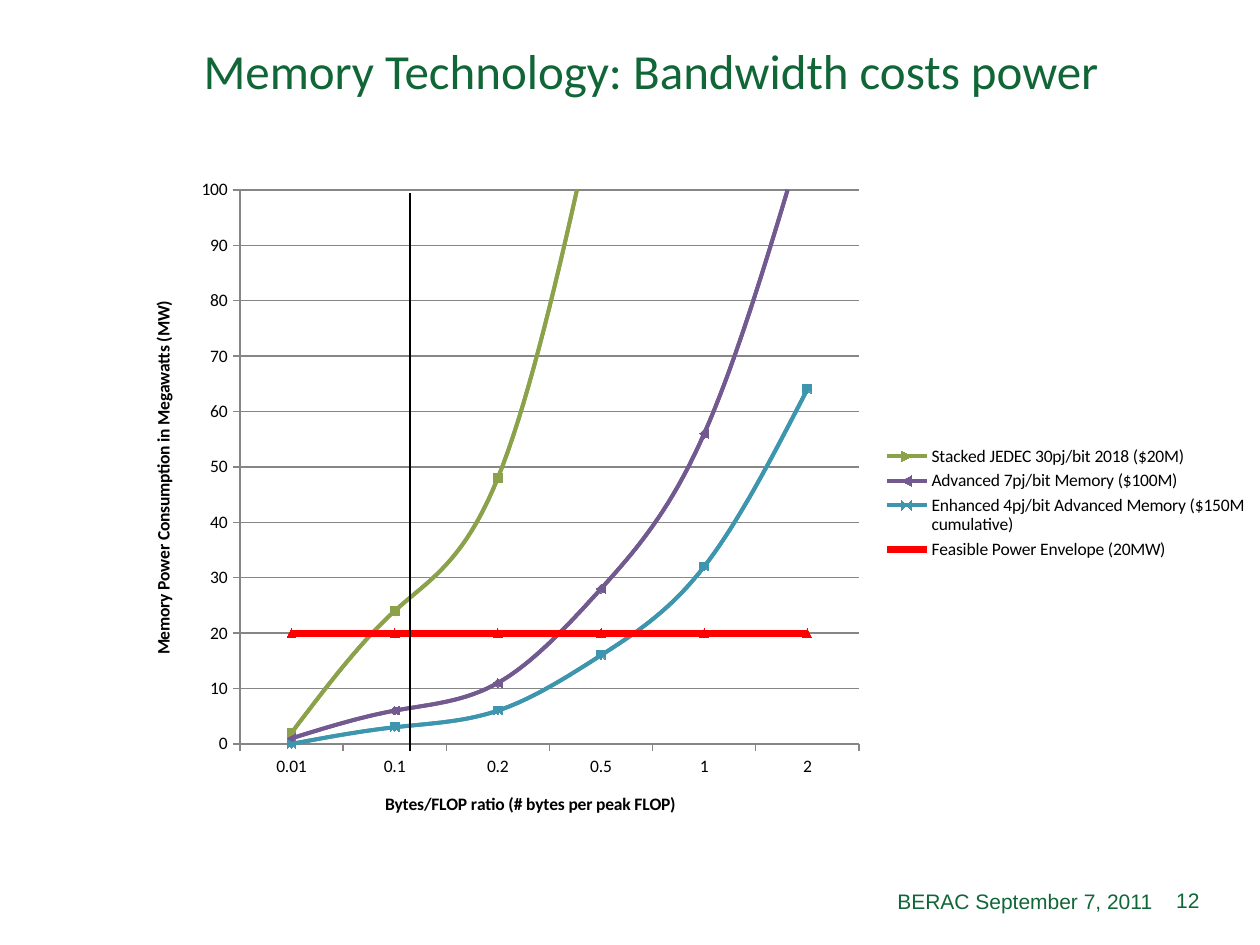
import lxml.etree
import pptx
import pptx.chart.data
import pptx.dml.color
import pptx.enum.chart
import pptx.enum.shapes
import pptx.enum.text
import pptx.oxml
import pptx.oxml.ns
import pptx.util

# Content: boxes are left, top, width, height in px
SLIDE = (1260, 945)
TITLE = ("Memory Technology: Bandwidth costs power", (105, 9, 1092, 121))
FOOTERS = [
    ("BERAC September 7, 2011", (430, 876, 735, 50)),
    ("12", (1159, 875, 53, 50)),
]
RATIOS = ["0.01", "0.1", "0.2", "0.5", "1", "2"]
RATIO_TITLE = "Bytes/FLOP ratio (# bytes per peak FLOP)"
POWER_TITLE = "Memory Power Consumption in Megawatts (MW)"
MEMORIES = [  # name, megawatts, colour, line width in pt
    ("Stacked JEDEC 30pj/bit 2018 ($20M)", (2, 24, 48, 120, 240, 480), "green", 2.25),
    ("Advanced 7pj/bit Memory ($100M)", (1, 6, 11, 28, 56, 112), "purple", 2.25),
    ("Enhanced 4pj/bit Advanced Memory ($150M cumulative)",
     (0, 3, 6, 16, 32, 64), "blue", 2.25),
    ("Feasible Power Envelope (20MW)", (20,) * 6, "red", 4),
]
CHART = (126, 166, 1134, 674)
PLOT = (240, 190, 619, 554)
LEGEND = (877, 442, 377, 122)
RATIO_MARK = (410, 751, 410, 193)
COLOURS = {
    "title": "106636", "text": "000000", "axis": "868686", "green": "8BA24A",
    "purple": "725990", "blue": "3D96AE", "red": "FF0000",
}


def px(value):
    return pptx.util.Emu(round(value * 914400 / 126))


def colour(name):
    return pptx.dml.color.RGBColor.from_string(COLOURS[name])


def set_font(font, **values):
    font.color.rgb = colour(values.pop("colour"))
    for key, value in values.items():
        setattr(font, key, value)


def place(shape, box):
    for key, value in zip(("left", "top", "width", "height"), box):
        setattr(shape, key, px(value))


def fill_text(shape, text, align, **font):
    frame = shape.text_frame
    frame.text = text
    frame.word_wrap = True
    frame.vertical_anchor = pptx.enum.text.MSO_ANCHOR.MIDDLE
    frame.paragraphs[0].alignment = align
    set_font(frame.paragraphs[0].runs[0].font, colour="title", **font)


def chart_xml(body):
    return pptx.oxml.parse_xml(body.replace(">", f" {pptx.oxml.ns.nsdecls('c')}>", 1))


def layout_xml(box, target):
    values = {
        "x": (box[0] - CHART[0]) / CHART[2], "y": (box[1] - CHART[1]) / CHART[3],
        "w": box[2] / CHART[2], "h": box[3] / CHART[3],
    }
    parts = "".join(f'<c:{key}Mode val="edge"/>' for key in "xy")
    parts += "".join(f'<c:{key} val="{value:.4f}"/>' for key, value in values.items())
    return chart_xml(f"<c:layout><c:manualLayout>{target}{parts}</c:manualLayout></c:layout>")


def drop_layout(parent):
    for layout in parent.findall(pptx.oxml.ns.qn("c:layout")):
        parent.remove(layout)


def add_power_chart(slide):
    data = pptx.chart.data.CategoryChartData()
    data.categories = RATIOS
    # Each curve is drawn twice; only the named upper set is in the legend
    for number, (_, power, _, _) in enumerate(MEMORIES, 1):
        data.add_series(f"Series {number}", power)
    for name, power, _, _ in MEMORIES:
        data.add_series(name, power)
    chart = slide.shapes.add_chart(
        pptx.enum.chart.XL_CHART_TYPE.LINE_MARKERS, *map(px, CHART), data).chart
    chart.has_title = False
    set_font(chart.font, name="Calibri", size=pptx.util.Pt(10), colour="text")

    # Curves
    for number, series in enumerate(chart.plots[0].series):
        _, _, shade, width = MEMORIES[number % len(MEMORIES)]
        series.smooth = True
        series.format.line.color.rgb = colour(shade)
        series.format.line.width = pptx.util.Pt(width)
    series.marker.style = pptx.enum.chart.XL_MARKER_STYLE.NONE

    # Axes
    for axis, title in ((chart.category_axis, RATIO_TITLE), (chart.value_axis, POWER_TITLE)):
        axis.major_tick_mark = pptx.enum.chart.XL_TICK_MARK.OUTSIDE
        axis.format.line.color.rgb = colour("axis")
        axis.axis_title.text_frame.text = title
        set_font(axis.axis_title.text_frame.paragraphs[0].runs[0].font, name="Calibri",
                 size=pptx.util.Pt(10), bold=True, colour="text")
    axis.minimum_scale, axis.maximum_scale, axis.major_unit = 0, 100, 10
    axis.major_gridlines.format.line.color.rgb = colour("axis")

    # Plot and legend positions
    plot_area = chart.plots[0]._element.getparent()
    drop_layout(plot_area)
    plot_area.insert(0, layout_xml(PLOT, '<c:layoutTarget val="inner"/>'))
    chart.has_legend = True
    chart.legend.position = pptx.enum.chart.XL_LEGEND_POSITION.RIGHT
    chart.legend.include_in_layout = False
    legend = chart.legend._element
    drop_layout(legend)
    position = legend.find(pptx.oxml.ns.qn("c:legendPos"))
    position.addnext(layout_xml(LEGEND, ""))
    for number in reversed(range(len(MEMORIES))):
        position.addnext(chart_xml(
            f'<c:legendEntry><c:idx val="{number}"/><c:delete val="1"/></c:legendEntry>'))


def add_ratio_mark(slide):
    mark = slide.shapes.add_connector(
        pptx.enum.shapes.MSO_CONNECTOR.STRAIGHT, *map(px, RATIO_MARK))
    mark.line.color.rgb = colour("text")
    mark.line.width = pptx.util.Pt(1)
    lxml.etree.SubElement(mark._element.spPr, pptx.oxml.ns.qn("a:effectLst"))


def main():
    deck = pptx.Presentation()
    deck.slide_width, deck.slide_height = map(px, SLIDE)
    slide = deck.slides.add_slide(deck.slide_layouts[5])

    # Title and footers
    text, box = TITLE
    place(slide.shapes.title, box)
    fill_text(slide.shapes.title, text, pptx.enum.text.PP_ALIGN.CENTER,
              name="Calibri", size=pptx.util.Pt(28))
    for text, box in FOOTERS:
        footer = slide.shapes.add_textbox(*map(px, box))
        fill_text(footer, text, pptx.enum.text.PP_ALIGN.RIGHT,
                  name="Arial", size=pptx.util.Pt(12))

    # Chart with its ratio mark
    add_power_chart(slide)
    add_ratio_mark(slide)
    deck.save("out.pptx")


if __name__ == "__main__":
    main()
